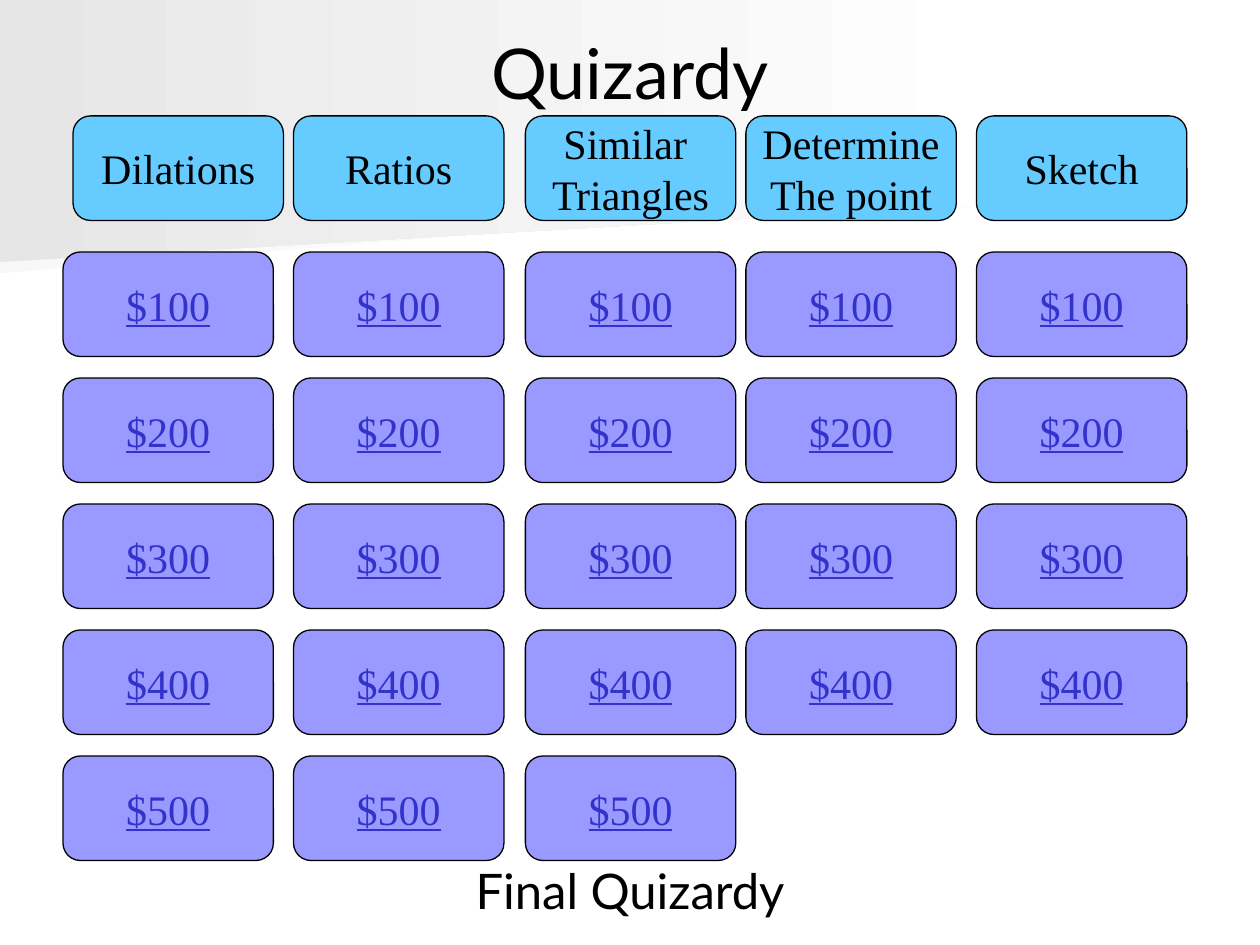
from dataclasses import dataclass

from pptx import Presentation
from pptx import util as u
from pptx.dml.color import RGBColor
from pptx.enum import shapes, text

COLORS = {
    "black": "000000",
    "category": "66CCFF",
    "prize": "9999FF",
    "link": "3333CC",
    "band_back": "F8F8F8",
    "band_front": "E6E6E6",
    "white": "FFFFFF",
}
CARD_WIDTH, CARD_HEIGHT = 1.67, 0.83
HEADER_TOP, FIRST_PRIZE_TOP, ROW_STEP = 0.92, 2, 1


@dataclass
class Category:
    lines: list[str]
    header_left: float
    prize_left: float
    prizes: int


@dataclass
class Band:
    points: list[tuple[float, float]]
    color: str


@dataclass
class Heading:
    words: str
    top: float
    size: int


CATEGORIES = [
    Category(["Dilations"], 0.58, 0.5, 5),
    Category(["Ratios"], 2.33, 2.33, 5),
    Category(["Similar ", "Triangles"], 4.17, 4.17, 5),
    Category(["Determine", "The point"], 5.92, 5.92, 4),
    Category(["Sketch"], 7.75, 7.75, 4),
]
BANDS = [
    Band([(7.78, 1.53), (0, 2.17), (0, 1.01), (7.79, 1.01)], "band_back"),
    Band([(7.92, 1.62), (0, 2.08), (0, 0), (7.92, 0)], "band_front"),
]
HEADINGS = [Heading("Quizardy", 0.3, 40), Heading("Final Quizardy", 6.8, 28)]


def rgb(name: str) -> RGBColor:
    return RGBColor.from_string(COLORS[name])


def write(frame, lines: list[str], font: str, size: int, color: str,
          underline: bool = False) -> None:
    """Fill a text frame with centred lines, one paragraph each."""
    frame.vertical_anchor = text.MSO_ANCHOR.MIDDLE
    for index, line in enumerate(lines):
        para = frame.paragraphs[0] if index == 0 else frame.add_paragraph()
        para.text = line
        para.alignment = text.PP_ALIGN.CENTER
        para.font.name = font
        para.font.size = u.Pt(size)
        para.font.color.rgb = rgb(color)
        if underline:
            para.font.underline = True


def draw_band(page, band: Band) -> None:
    points = [(u.Inches(x), u.Inches(y)) for x, y in band.points]
    builder = page.shapes.build_freeform(*points[0], scale=1.0)
    builder.add_line_segments(points[1:], close=True)
    shape = builder.convert_to_shape()
    shape.shadow.inherit = False
    shape.line.fill.background()
    shape.fill.gradient()
    shape.fill.gradient_angle = 0
    for stop, color in zip(shape.fill.gradient_stops, (band.color, "white")):
        stop.color.rgb = rgb(color)


def draw_heading(page, heading: Heading) -> None:
    box = page.shapes.add_textbox(
        u.Inches(0.5), u.Inches(heading.top), u.Inches(9), u.Inches(0.53))
    box.text_frame.word_wrap = True
    write(box.text_frame, [heading.words], "Lato", heading.size, "black")


def draw_card(page, left: float, top: float, lines: list[str], fill: str,
              color: str, underline: bool = False) -> None:
    card = page.shapes.add_shape(
        shapes.MSO_SHAPE.FLOWCHART_ALTERNATE_PROCESS, u.Inches(left),
        u.Inches(top), u.Inches(CARD_WIDTH), u.Inches(CARD_HEIGHT))
    card.shadow.inherit = False
    card.fill.solid()
    card.fill.fore_color.rgb = rgb(fill)
    card.line.color.rgb = rgb("black")
    card.line.width = u.Pt(0.75)
    card.text_frame.word_wrap = False
    write(card.text_frame, lines, "Times New Roman", 24, color, underline)


def draw_category(page, category: Category) -> None:
    draw_card(page, category.header_left, HEADER_TOP, category.lines,
              "category", "black")
    for row in range(category.prizes):
        draw_card(page, category.prize_left, FIRST_PRIZE_TOP + row * ROW_STEP,
                  [f"${(row + 1) * 100}"], "prize", "link", underline=True)


def main() -> None:
    deck = Presentation()
    deck.slide_width, deck.slide_height = u.Inches(10), u.Inches(7.5)
    page = deck.slides.add_slide(deck.slide_layouts[6])

    # Shaded background bands
    for band in BANDS:
        draw_band(page, band)
    # Title and closing line
    for heading in HEADINGS:
        draw_heading(page, heading)
    # Game board, column by column
    for category in CATEGORIES:
        draw_category(page, category)

    deck.save("out.pptx")


if __name__ == "__main__":
    main()
